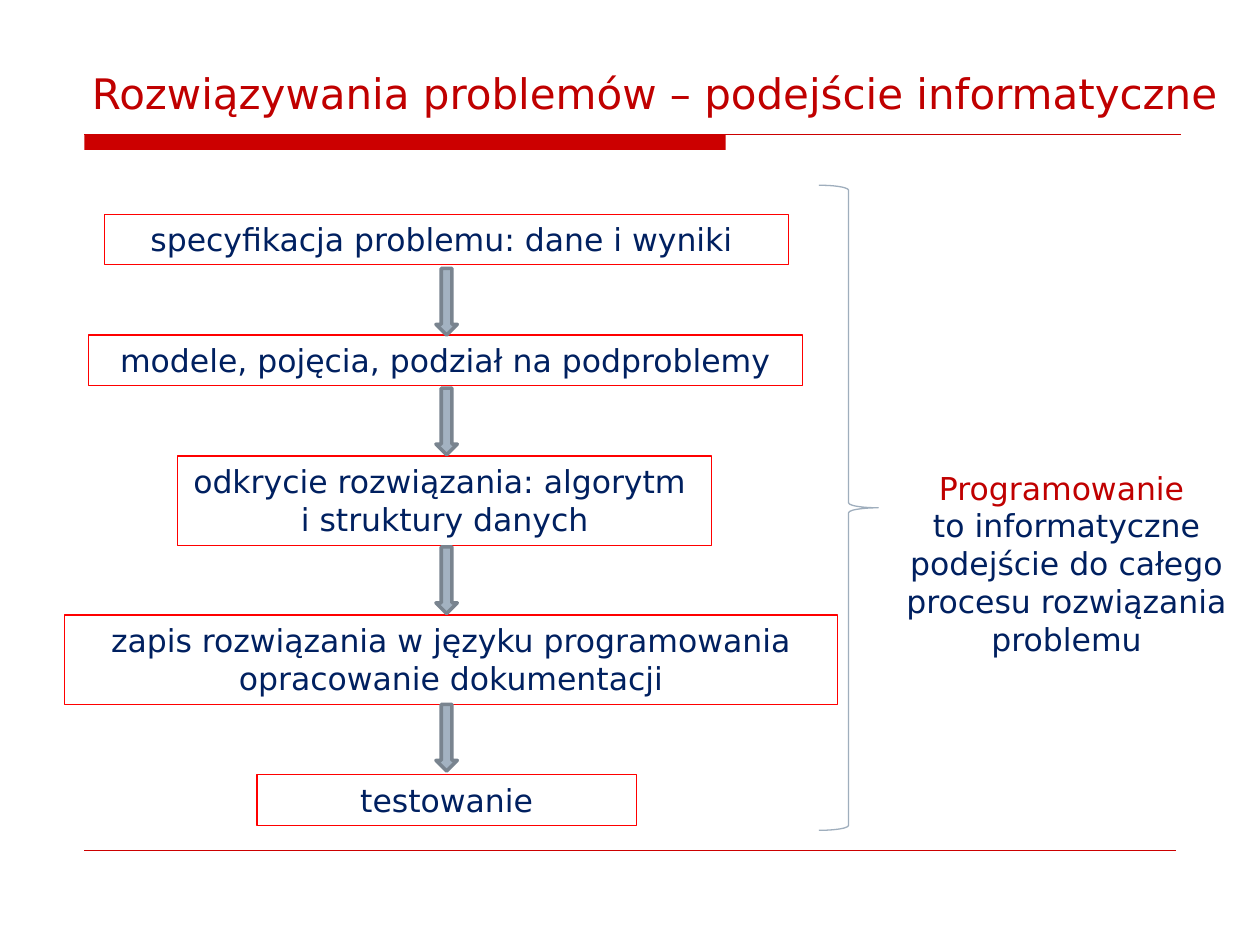
from pptx import Presentation
from pptx.dml.color import RGBColor
from pptx.enum.shapes import MSO_CONNECTOR, MSO_SHAPE
from pptx.enum.text import MSO_ANCHOR, MSO_AUTO_SIZE, PP_ALIGN
from pptx.oxml.ns import qn
from pptx.util import Inches, Pt
from lxml.etree import SubElement

RED = "CC0000"
DARK_RED = "C00000"
NAVY = "002060"

STEPS = [
    (0.83, 1.70, 5.43, 0.40, ["specyfikacja problemu: dane i wyniki "]),
    (0.70, 2.66, 5.67, 0.40, ["modele, pojęcia, podział na podproblemy"]),
    (1.41, 3.62, 4.24, 0.71, ["odkrycie rozwiązania: algorytm ", "i struktury danych"]),
    (0.51, 4.88, 6.14, 0.71, ["zapis rozwiązania w języku programowania", "opracowanie dokumentacji"]),
    (2.04, 6.15, 3.01, 0.40, ["testowanie"]),
]
ARROW_TOPS = [2.13, 3.08, 4.34, 5.59]


def color(value):
    return RGBColor.from_string(value)


def write(para, text, size=18, fill=NAVY, font="DejaVu Sans", align=PP_ALIGN.CENTER):
    para.alignment = align
    span = para.add_run()
    span.text = text
    span.font.name = font
    span.font.size = Pt(size)
    span.font.color.rgb = color(fill)


class SlideBuilder:
    def __init__(self, deck):
        self.slide = deck.slides.add_slide(deck.slide_layouts[5])

    def title(self, text, left, top, width, height):
        box = self.slide.shapes.title
        box.left, box.top = Inches(left), Inches(top)
        box.width, box.height = Inches(width), Inches(height)
        frame = box.text_frame
        frame.auto_size = MSO_AUTO_SIZE.NONE
        frame.vertical_anchor = MSO_ANCHOR.BOTTOM
        write(frame.paragraphs[0], text, size=24, fill=DARK_RED, align=PP_ALIGN.LEFT)

    def shape(self, kind, left, top, width, height, fill=None, line=None, weight=0.75):
        shape = self.slide.shapes.add_shape(
            kind, Inches(left), Inches(top), Inches(width), Inches(height))
        shape.shadow.inherit = False
        if fill:
            shape.fill.solid()
            shape.fill.fore_color.rgb = color(fill)
        else:
            shape.fill.background()
        if line:
            shape.line.color.rgb = color(line)
            shape.line.width = Pt(weight)
        else:
            shape.line.fill.background()
        return shape

    def rule(self, left, right, top, weight):
        line = self.slide.shapes.add_connector(
            MSO_CONNECTOR.STRAIGHT, Inches(left), Inches(top), Inches(right), Inches(top))
        line.line.color.rgb = color(RED)
        line.line.width = Pt(weight)
        SubElement(line._element.spPr, qn("a:effectLst"))

    def paragraphs(self, box, lines):
        frame = box.text_frame
        frame.word_wrap = True
        frame.vertical_anchor = MSO_ANCHOR.TOP
        for index, (text, fill) in enumerate(lines):
            para = frame.add_paragraph() if index else frame.paragraphs[0]
            write(para, text, fill=fill)

    def step(self, left, top, width, height, lines):
        box = self.shape(MSO_SHAPE.RECTANGLE, left, top, width, height, line="FF0000")
        self.paragraphs(box, [(text, NAVY) for text in lines])

    def text(self, left, top, width, height, lines):
        box = self.slide.shapes.add_textbox(
            Inches(left), Inches(top), Inches(width), Inches(height))
        self.paragraphs(box, lines)


def main():
    deck = Presentation()
    deck.slide_width, deck.slide_height = Inches(10), Inches(7.5)
    page = SlideBuilder(deck)
    page.title("Rozwiązywania problemów – podejście informatyczne", 0.63, 0.33, 9.37, 0.66)
    page.shape(MSO_SHAPE.RECTANGLE, 0.67, 1.07, 5.09, 0.12, fill=RED)
    page.rule(0.67, 9.37, 1.07, 0.75)
    page.rule(0.67, 9.33, 6.75, 0.25)
    for step in STEPS:
        page.step(*step)
    for top in ARROW_TOPS:
        page.shape(MSO_SHAPE.DOWN_ARROW, 3.46, top, 0.17, 0.53,
                   fill="A3B2C1", line="79848F", weight=2)
    page.shape(MSO_SHAPE.RIGHT_BRACE, 6.5, 1.47, 0.47, 5.12, line="9FAEBD")
    page.text(6.89, 3.67, 3.15, 1.62, [
        ("Programowanie ", DARK_RED),
        ("to informatyczne podejście do całego procesu rozwiązania problemu", NAVY),
    ])
    deck.save("out.pptx")


if __name__ == "__main__":
    main()
